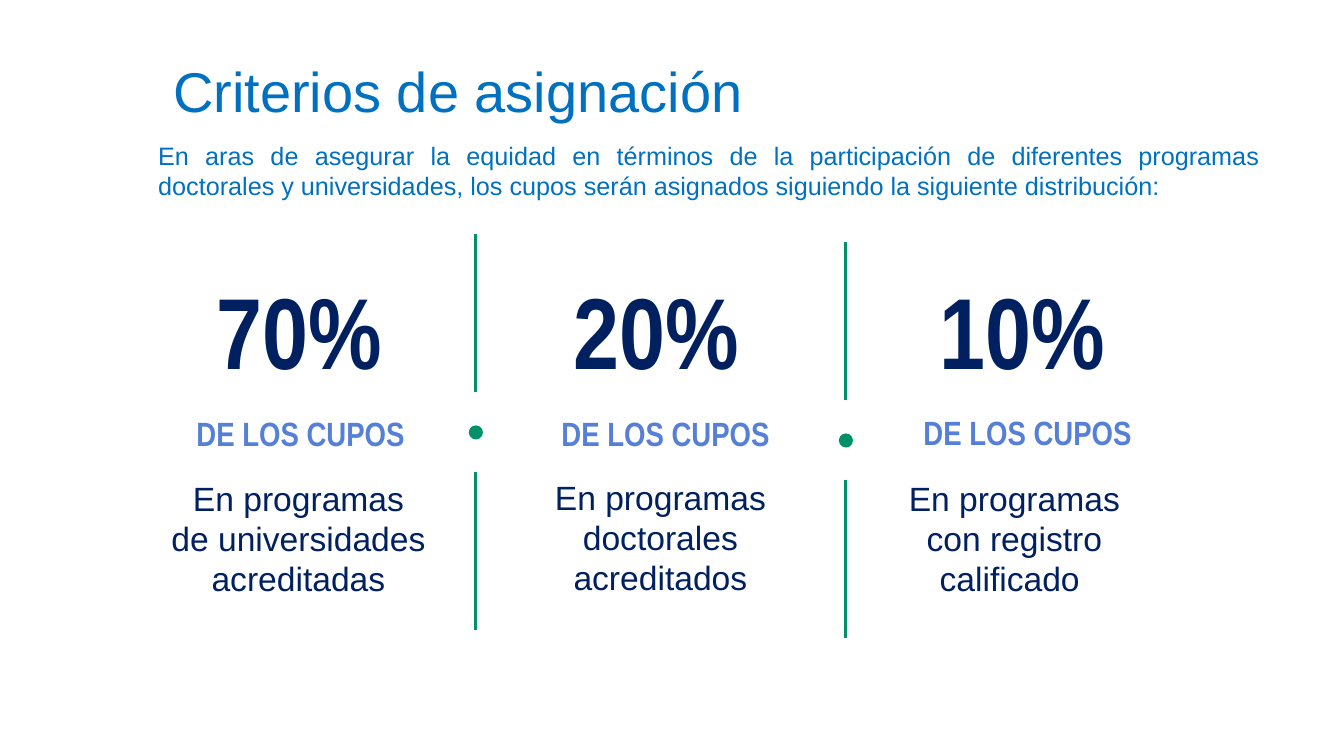
from lxml import etree
from pptx import Presentation
from pptx.dml.color import RGBColor
from pptx.enum.shapes import MSO_CONNECTOR as CONNECTOR, MSO_SHAPE as SHAPE
from pptx.enum.text import MSO_AUTO_SIZE as AUTO_SIZE, PP_ALIGN as ALIGN
from pptx.oxml.ns import qn
from pptx.util import Emu, Pt

PX = 9144
BLUE = RGBColor(0x00, 0x70, 0xC0)
NAVY = RGBColor(0x00, 0x20, 0x60)
SOFT_BLUE = RGBColor(0x56, 0x80, 0xD8)
GREEN = RGBColor(0x02, 0x90, 0x69)

SHARES = [
    ("70%", (205, 262), (185, 405), (159, 469),
     "En programas de universidades acreditadas"),
    ("20%", (559, 262), (547, 405), (518, 468),
     "En programas doctorales acreditados"),
    ("10%", (922, 262), (906, 404), (869, 469),
     "En programas con registro calificado "),
]
DIVIDERS = [(472, 232), (839, 240)]


def px(*lengths):
    return [Emu(length * PX) for length in lengths]


def add_text(slide, box, text, size, color, font="Arial", bold=False,
             align=ALIGN.LEFT, wrap=True):
    shape = slide.shapes.add_textbox(*px(*box))
    text_frame = shape.text_frame
    text_frame.text = text
    text_frame.word_wrap = wrap
    text_frame.auto_size = AUTO_SIZE.SHAPE_TO_FIT_TEXT
    paragraph = text_frame.paragraphs[0]
    paragraph.alignment = align
    run_font = paragraph.runs[0].font
    run_font.name = font
    run_font.size = Pt(size)
    run_font.bold = bold
    run_font.color.rgb = color


def add_share(slide, percent, percent_at, label_at, detail_at, detail):
    add_text(slide, (*percent_at, 262, 131), percent, 72, NAVY,
             "Arial Narrow", bold=True)
    add_text(slide, (*detail_at, 274, 131), detail, 24, NAVY,
             align=ALIGN.CENTER)
    add_text(slide, (*label_at, 412, 50), "DE LOS CUPOS", 24, SOFT_BLUE,
             "Arial Narrow", bold=True)


def add_line(slide, x, top, bottom):
    line = slide.shapes.add_connector(CONNECTOR.STRAIGHT,
                                      *px(x, top, x, bottom))
    line.line.color.rgb = GREEN
    line.line.width = Pt(2.25)
    etree.SubElement(line.element.spPr, qn("a:effectLst"))


def add_divider(slide, x, top):
    for start in (top, top + 236):
        add_line(slide, x, start, start + 157)
    dot = slide.shapes.add_shape(SHAPE.OVAL, *px(x - 7, top + 190, 14, 14))
    dot.shadow.inherit = False
    dot.fill.solid()
    dot.fill.fore_color.rgb = GREEN
    dot.line.fill.background()


def main():
    presentation = Presentation()
    presentation.slide_width, presentation.slide_height = px(1333, 750)
    slide = presentation.slides.add_slide(presentation.slide_layouts[6])
    add_text(slide, (162, 51, 607, 77), "Criterios de asignación", 40, BLUE,
             wrap=False)
    add_text(slide, (147, 134, 1112, 71),
             "En aras de asegurar la equidad en términos de la participación "
             "de diferentes programas doctorales y universidades, los cupos "
             "serán asignados siguiendo la siguiente distribución: ",
             18, BLUE, align=ALIGN.JUSTIFY)
    for share in SHARES:
        add_share(slide, *share)
    for x, top in DIVIDERS:
        add_divider(slide, x, top)
    presentation.save("out.pptx")


if __name__ == "__main__":
    main()
